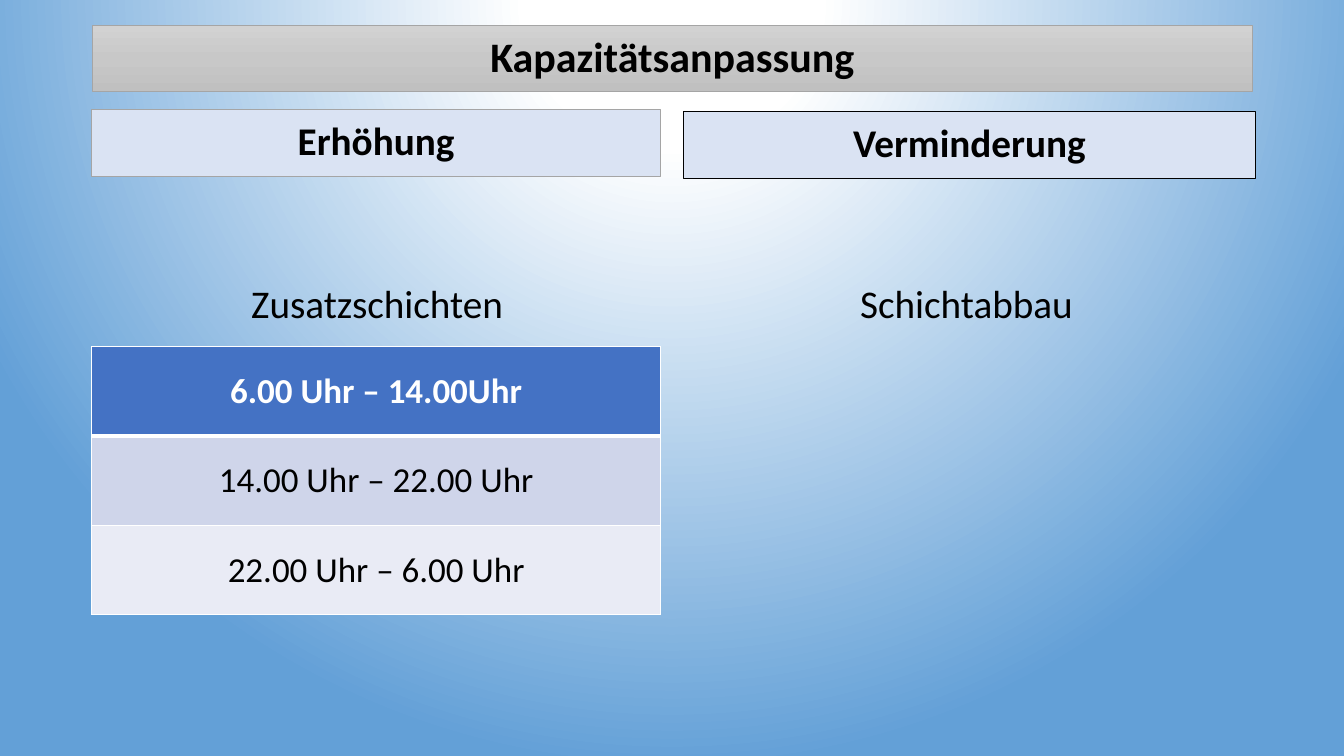
from lxml.etree import SubElement
from pptx import Presentation
from pptx.dml.color import RGBColor
from pptx.enum.shapes import MSO_SHAPE
from pptx.enum.text import MSO_ANCHOR, MSO_AUTO_SIZE, PP_ALIGN
from pptx.oxml.ns import qn
from pptx.util import Inches, Pt

BLACK = RGBColor(0x00, 0x00, 0x00)
WHITE = RGBColor(0xFF, 0xFF, 0xFF)
SKY = RGBColor(0x63, 0xA0, 0xD7)
GRAY = RGBColor(0xA5, 0xA5, 0xA5)
GRAY_TOP = RGBColor(0xD2, 0xD2, 0xD2)
GRAY_MIDDLE = RGBColor(0xC8, 0xC8, 0xC8)
GRAY_BOTTOM = RGBColor(0xC0, 0xC0, 0xC0)
PALE_BLUE = RGBColor(0xDA, 0xE3, 0xF3)
ROW_FILLS = [RGBColor(0x44, 0x72, 0xC4), RGBColor(0xCF, 0xD5, 0xEA), RGBColor(0xE9, 0xEB, 0xF5)]

SHIFTS = ["6.00 Uhr – 14.00Uhr", "14.00 Uhr – 22.00 Uhr", "22.00 Uhr – 6.00 Uhr"]


def set_gradient_stops(gradient, stops):
    """Replace the stops of a gradFill; each stop is (percent, colour, alpha percent)."""
    stop_list = gradient.find(qn("a:gsLst"))
    for old_stop in list(stop_list):
        stop_list.remove(old_stop)
    for percent, color, alpha in stops:
        stop = SubElement(stop_list, qn("a:gs"), pos=str(percent * 1000))
        tone = SubElement(stop, qn("a:srgbClr"), val=str(color))
        if alpha < 100:
            SubElement(tone, qn("a:alpha"), val=str(alpha * 1000))


def set_cell_borders(cell, bottom_width):
    properties = cell._tc.get_or_add_tcPr()
    for side, width in (("L", 1), ("R", 1), ("T", 1), ("B", bottom_width)):
        border = SubElement(properties, qn(f"a:ln{side}"), w=str(Pt(width)))
        fill = SubElement(border, qn("a:solidFill"))
        SubElement(fill, qn("a:srgbClr"), val=str(WHITE))


class SlideBuilder:
    """Holds the text style and the slide being filled."""

    font_name = "Calibri"
    heading_size = 28
    cell_size = 25

    def __init__(self, deck):
        self.slide = deck.slides.add_slide(deck.slide_layouts[5])

    def background(self):
        self.slide.background.fill.gradient()
        gradient = self.slide.element.find(".//" + qn("a:gradFill"))
        set_gradient_stops(gradient, [(0, WHITE, 100), (19, WHITE, 100), (100, SKY, 91)])
        gradient.remove(gradient.find(qn("a:lin")))
        circle = SubElement(gradient, qn("a:path"), path="circle")
        SubElement(circle, qn("a:fillToRect"), l="50000", t="-80000", r="50000", b="180000")

    def set_text(self, frame, text, size, color=BLACK, bold=False):
        paragraph = frame.paragraphs[0]
        paragraph.text = text
        paragraph.alignment = PP_ALIGN.CENTER
        font = paragraph.font
        font.name, font.size, font.bold = self.font_name, Pt(size), bold
        font.color.rgb = color
        return paragraph

    def title(self, text, left, top, width, height):
        bar = self.slide.shapes.title
        bar.left, bar.top, bar.width, bar.height = map(Inches, (left, top, width, height))
        bar.fill.gradient()
        bar.fill.gradient_angle = 270
        gradient = bar.element.spPr.find(qn("a:gradFill"))
        set_gradient_stops(
            gradient, [(0, GRAY_TOP, 100), (50, GRAY_MIDDLE, 100), (100, GRAY_BOTTOM, 100)]
        )
        bar.line.color.rgb = GRAY
        bar.line.width = Pt(0.5)
        frame = bar.text_frame
        frame.auto_size = MSO_AUTO_SIZE.NONE
        frame.vertical_anchor = MSO_ANCHOR.MIDDLE
        self.set_text(frame, text, 30, bold=True).line_spacing = 0.9

    def heading(self, text, left, top, width, height, line_color, line_width):
        box = self.slide.shapes.add_shape(
            MSO_SHAPE.RECTANGLE, *map(Inches, (left, top, width, height))
        )
        box.shadow.inherit = False
        box.fill.solid()
        box.fill.fore_color.rgb = PALE_BLUE
        box.line.color.rgb = line_color
        box.line.width = Pt(line_width)
        box.text_frame.vertical_anchor = MSO_ANCHOR.MIDDLE
        self.set_text(box.text_frame, text, self.heading_size, bold=True).line_spacing = 0.9

    def label(self, text, left, top, width, height):
        box = self.slide.shapes.add_textbox(*map(Inches, (left, top, width, height)))
        box.text_frame.word_wrap = True
        self.set_text(box.text_frame, text, self.heading_size).line_spacing = 0.9

    def shift_table(self, shifts, left, top, width, height):
        table = self.slide.shapes.add_table(
            len(shifts), 1, *map(Inches, (left, top, width, height))
        ).table
        for index, (shift, fill_color) in enumerate(zip(shifts, ROW_FILLS)):
            is_header = index == 0
            cell = table.cell(index, 0)
            set_cell_borders(cell, bottom_width=3 if is_header else 1)
            cell.fill.solid()
            cell.fill.fore_color.rgb = fill_color
            cell.vertical_anchor = MSO_ANCHOR.MIDDLE
            text_color = WHITE if is_header else BLACK
            self.set_text(cell.text_frame, shift, self.cell_size, text_color, bold=is_header)


def main():
    deck = Presentation()
    deck.slide_width, deck.slide_height = Inches(13.33), Inches(7.5)

    page = SlideBuilder(deck)
    page.background()
    page.title("Kapazitätsanpassung", 0.92, 0.25, 11.5, 0.66)
    page.heading("Erhöhung", 0.91, 1.09, 5.64, 0.66, GRAY, 0.5)
    page.label("Zusatzschichten", 0.92, 2.77, 5.64, 4)
    page.heading("Verminderung", 6.78, 1.11, 5.67, 0.66, BLACK, 0.75)
    page.label("Schichtabbau", 6.75, 2.77, 5.67, 4)
    page.shift_table(SHIFTS, 0.91, 3.44, 5.64, 2.66)
    deck.save("out.pptx")


if __name__ == "__main__":
    main()
